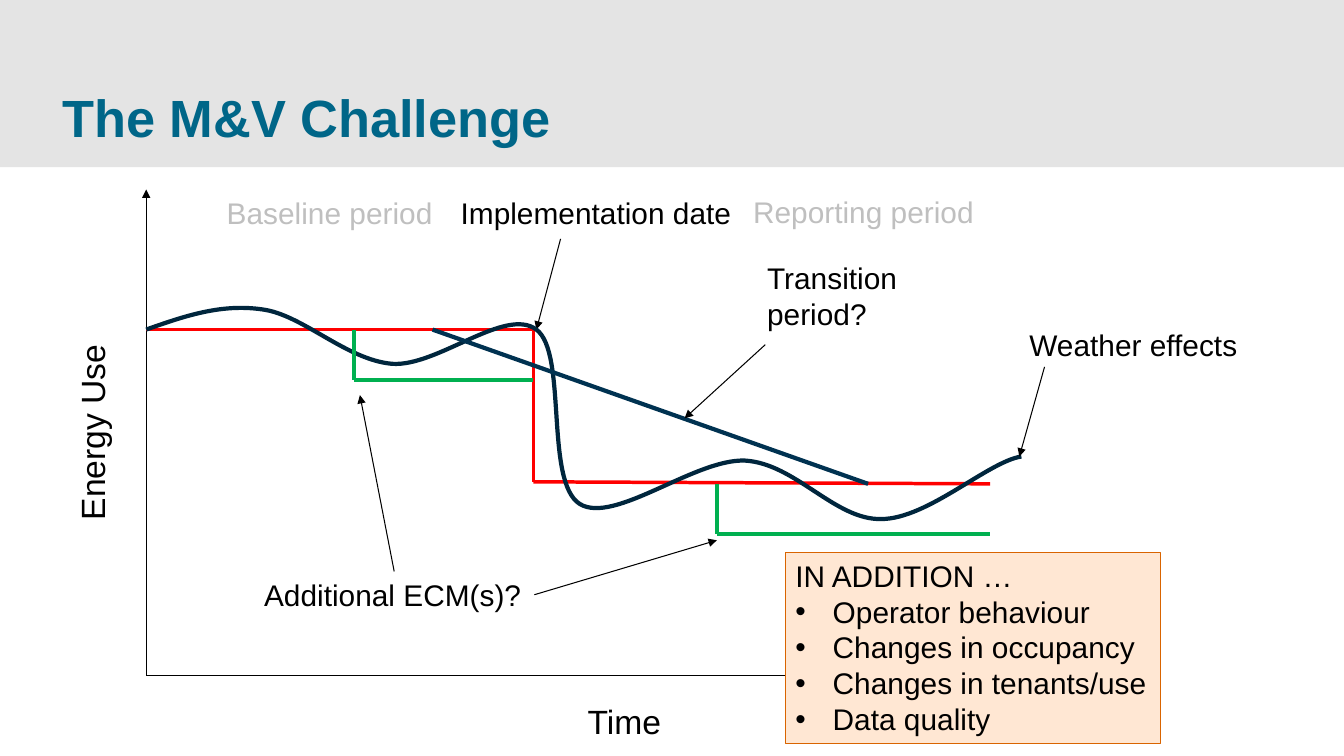
from dataclasses import dataclass

from lxml import etree
from pptx import Presentation
from pptx.dml.color import RGBColor
from pptx.enum.shapes import MSO_CONNECTOR as Connector, MSO_SHAPE as Shape
from pptx.enum.text import MSO_ANCHOR as Anchor, MSO_AUTO_SIZE as AutoSize, PP_ALIGN as Align
from pptx.oxml.ns import qn
from pptx.util import Inches, Pt


@dataclass(frozen=True)
class Theme:
    font: str = "Arial"
    title_size: float = 37.33
    axis_size: float = 24
    label_size: float = 21.33
    thin: float = 0.75
    medium: float = 2.5
    thick: float = 3
    band: str = "E4E4E4"
    title: str = "006688"
    ink: str = "000000"
    muted: str = "BFBFBF"
    ideal: str = "FF0000"
    weather: str = "00263D"
    transition: str = "003251"
    measure: str = "00B050"
    callout_fill: str = "FFE7D3"
    callout_line: str = "D96400"


THEME = Theme()

# Key positions on the graph, in inches
LEFT, BOTTOM = 1.45, 6.7
START, END = 5.29, 9.82
BEFORE, AFTER = 3.27, 4.8
SAVING = 0.5

# Two control points and an end point for each curve
WEATHER_CURVES = [
    (1.82, 3.14), (2.19, 3.01), (2.6, 3.07),
    (3, 3.12), (3.43, 3.57), (3.89, 3.61),
    (4.34, 3.64), (5.01, 3.04), (5.32, 3.27),
    (5.63, 3.5), (5.4, 4.78), (5.75, 5),
    (6.09, 5.21), (6.89, 4.55), (7.39, 4.57),
    (7.89, 4.6), (8.28, 5.16), (8.74, 5.15),
    (9.2, 5.15), (9.8, 4.58), (10.13, 4.53),
]


def rgb(color):
    return RGBColor.from_string(color)


def style_font(font, size, color, bold=False):
    font.name = THEME.font
    font.size = Pt(size)
    font.bold = bold
    font.color.rgb = rgb(color)


def write_lines(frame, lines, size, color):
    frame.text = "\n".join(lines)
    frame.word_wrap = False
    frame.auto_size = AutoSize.SHAPE_TO_FIT_TEXT
    for para in frame.paragraphs:
        para.alignment = Align.LEFT
        for span in para.runs:
            style_font(span.font, size, color)


def add_label(parent, text, left, top, width, height=0.46,
              size=THEME.label_size, color=THEME.ink):
    box = parent.shapes.add_textbox(
        Inches(left), Inches(top), Inches(width), Inches(height))
    write_lines(box.text_frame, text.split("\n"), size, color)
    return box


def add_line(parent, begin, end, color=THEME.ink, width=THEME.thin, arrow=False):
    line = parent.shapes.add_connector(
        Connector.STRAIGHT, *(Inches(value) for value in (*begin, *end)))
    line.line.color.rgb = rgb(color)
    line.line.width = Pt(width)
    if arrow:
        etree.SubElement(line.line._get_or_add_ln(), qn("a:tailEnd"), type="triangle")
    etree.SubElement(line._element.spPr, qn("a:effectLst"))
    return line


def add_path(parent, points, color, width):
    """Draw straight lines through the points, one after another."""
    for begin, end in zip(points, points[1:]):
        add_line(parent, begin, end, color, width)


def add_rectangle(page, left, top, width, height, fill):
    box = page.shapes.add_shape(
        Shape.RECTANGLE, Inches(left), Inches(top), Inches(width), Inches(height))
    box.shadow.inherit = False
    box.fill.solid()
    box.fill.fore_color.rgb = rgb(fill)
    return box


def add_curve(parent, start, points, color, width):
    """Draw a chain of cubic Bézier curves, three points to each curve."""
    builder = parent.shapes.build_freeform(Inches(start[0]), Inches(start[1]))
    builder.add_line_segments([(Inches(x), Inches(y)) for x, y in points], close=False)
    curve = builder.convert_to_shape()
    segments = list(curve._element.iter(qn("a:lnTo")))
    for index in range(0, len(segments), 3):
        first, *others = segments[index:index + 3]
        first.tag = qn("a:cubicBezTo")
        for segment in others:
            first.append(segment[0])
            segment.getparent().remove(segment)
    curve.shadow.inherit = False
    curve.fill.background()
    curve.line.color.rgb = rgb(color)
    curve.line.width = Pt(width)


def add_bullet(para):
    properties = para._p.get_or_add_pPr()
    properties.set("marL", str(Inches(0.37)))
    properties.set("indent", str(-Inches(0.37)))
    etree.SubElement(properties, qn("a:buFont"), typeface=THEME.font)
    etree.SubElement(properties, qn("a:buChar"), char="•")


def add_header(page, text):
    band = add_rectangle(page, 0, 0, 13.33, 1.66, THEME.band)
    band.line.fill.background()
    page.shapes._spTree.insert(2, band._element)  # behind the title
    title = page.shapes.title
    title.left, title.top = Inches(0.62), Inches(0.37)
    title.width, title.height = Inches(11.93), Inches(1.1)
    frame = title.text_frame
    frame.text = text
    frame.vertical_anchor = Anchor.BOTTOM
    frame.margin_left = frame.margin_right = 0
    frame.margin_top = frame.margin_bottom = 0
    para = frame.paragraphs[0]
    para.alignment = Align.LEFT
    style_font(para.runs[0].font, THEME.title_size, THEME.title, bold=True)


def add_axes(page):
    for tip in ((LEFT, 1.88), (11.01, BOTTOM)):
        add_line(page, (LEFT, BOTTOM), tip, arrow=True)
    energy = add_label(page, "Energy Use", -0.07, 4.03, 1.96, 0.5, THEME.axis_size)
    energy.rotation = 270
    add_label(page, "Time", 5.73, 6.9, 0.94, 0.5, THEME.axis_size)


def add_weather(group):
    add_curve(group, (LEFT, BEFORE), WEATHER_CURVES, THEME.weather, THEME.thick)
    add_label(group, "Weather effects", 10.11, 3.19, 2.28)
    add_line(group, (10.36, 3.64), (10.11, 4.53), arrow=True)


def add_transition(group):
    add_line(group, (4.29, BEFORE), (8.61, AFTER), THEME.transition, THEME.thick)
    add_label(group, "Transition\nperiod?", 7.51, 2.53, 1.5, 0.82)
    add_line(group, (7.59, 3.42), (6.79, 4.15), arrow=True)


def add_measures(group):
    """Draw the extra savings steps and the label that points at them."""
    label = add_label(group, "Additional ECM(s)?", 2.52, 5.67, 2.78)
    for left, right, level, begin, tip, side in (
            (7.11, END, AFTER, (5.3, 5.9), (7.11, 5.36), 3),
            (3.51, START, BEFORE, (3.91, 5.67), (3.57, 3.92), 0)):
        low = level + SAVING
        add_path(group, [(left, level), (left, low), (right, low)],
                 THEME.measure, THEME.thick)
        add_line(group, begin, tip, arrow=True).begin_connect(label, side)


def add_callout(page, heading, items):
    box = add_rectangle(page, 7.79, 5.48, 3.72, 1.9, THEME.callout_fill)
    box.line.color.rgb = rgb(THEME.callout_line)
    box.line.width = Pt(THEME.thin)
    frame = box.text_frame
    frame.vertical_anchor = Anchor.TOP
    write_lines(frame, [heading, *items], THEME.label_size, THEME.ink)
    for para in frame.paragraphs[1:]:
        add_bullet(para)


def main():
    deck = Presentation()
    deck.slide_width, deck.slide_height = Inches(13.33), Inches(7.5)
    page = deck.slides.add_slide(deck.slide_layouts[5])

    add_header(page, "The M&V Challenge")
    add_axes(page)
    add_path(page, [(LEFT, BEFORE), (START, BEFORE), (START, 4.78), (END, AFTER)],
             THEME.ideal, THEME.medium)
    add_label(page, "Implementation date", 4.47, 1.88, 2.91)
    add_line(page, (5.56, 2.37), (5.32, BEFORE), arrow=True)
    for add_effect in (add_weather, add_transition, add_measures):
        add_effect(page.shapes.add_group_shape())
    add_callout(page, "IN ADDITION …", [
        "Operator behaviour", "Changes in occupancy",
        "Changes in tenants/use", "Data quality"])
    add_label(page, "Baseline period", 2.15, 1.88, 2.27, color=THEME.muted)
    add_label(page, "Reporting period", 7.37, 1.87, 2.41, color=THEME.muted)
    deck.save("out.pptx")


if __name__ == "__main__":
    main()
